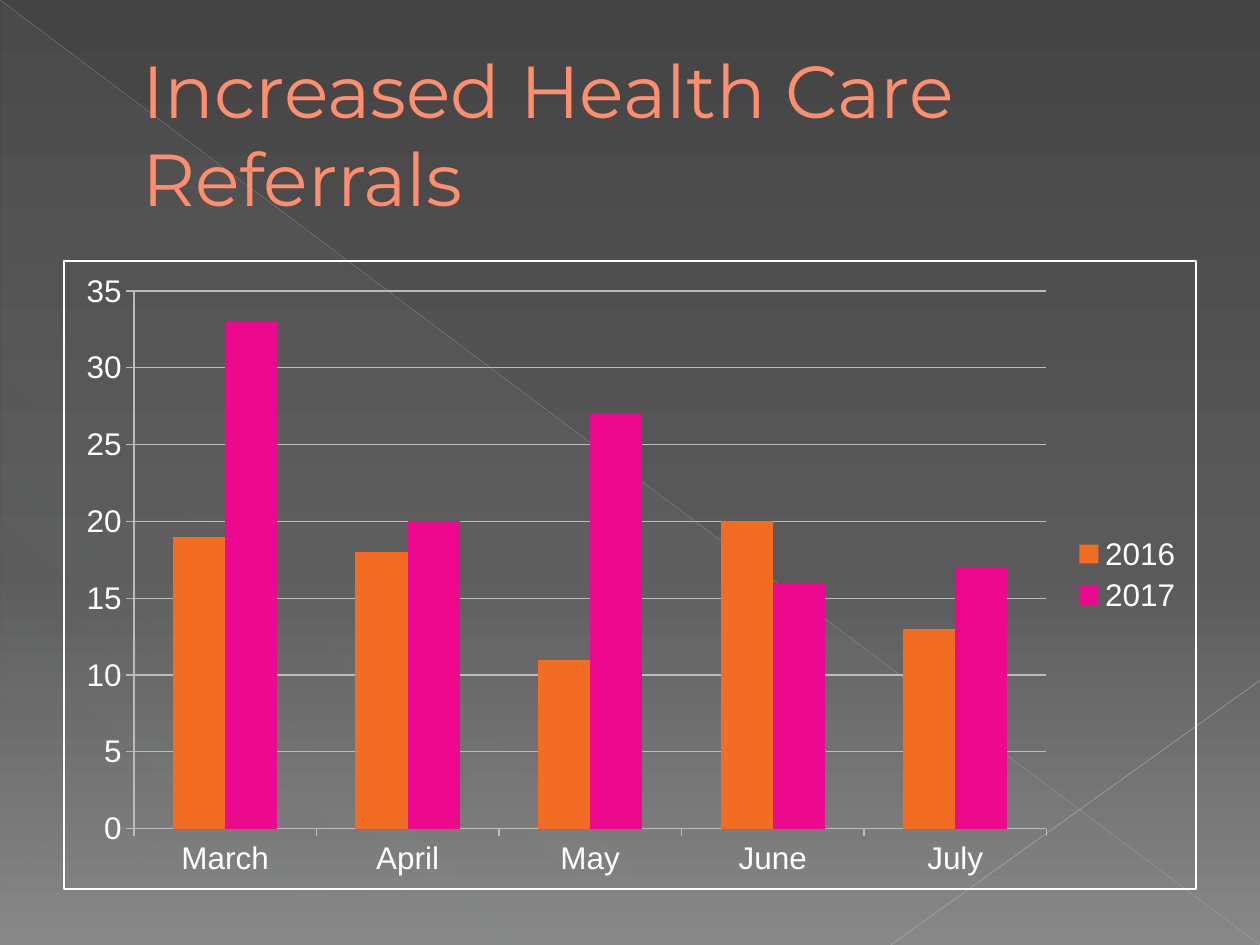
from lxml import etree
from pptx import Presentation
from pptx.chart.data import CategoryChartData
from pptx.dml.color import RGBColor
from pptx.enum.chart import XL_CHART_TYPE, XL_LEGEND_POSITION, XL_TICK_MARK
from pptx.enum.shapes import MSO_CONNECTOR, MSO_SHAPE
from pptx.enum.text import MSO_ANCHOR
from pptx.oxml.ns import qn
from pptx.util import Inches, Pt

COLUMNS = XL_CHART_TYPE.COLUMN_CLUSTERED
LEGEND_RIGHT = XL_LEGEND_POSITION.RIGHT
TICK_OUTSIDE = XL_TICK_MARK.OUTSIDE
STRAIGHT = MSO_CONNECTOR.STRAIGHT
RIGHT_TRIANGLE = MSO_SHAPE.RIGHT_TRIANGLE
MIDDLE = MSO_ANCHOR.MIDDLE

WIDTH, HEIGHT = 10, 7.5
MARGIN = 0.05
GRID_COLOR = "BABCBA"
MONTHS = ["March", "April", "May", "June", "July"]
REFERRALS = {
    "2016": ([19, 18, 11, 20, 13], "F36C24"),
    "2017": ([33, 20, 27, 16, 17], "EC098D"),
}


def color(value):
    """Turn a hex string into a colour."""
    return RGBColor.from_string(value)


def place(x, y):
    """Turn shares of the slide's size into lengths."""
    return Inches(x * WIDTH), Inches(y * HEIGHT)


def set_values(target, values):
    """Set each attribute named in a dict."""
    for name, value in values.items():
        setattr(target, name, value)


def set_alpha(color_element, percent):
    """Give a colour element an opacity in percent."""
    alpha = etree.SubElement(color_element, qn("a:alpha"))
    alpha.set("val", str(percent * 1000))


def set_gradient(fill, element, stops, angle):
    """Fill with a linear gradient of (position, colour, opacity) stops."""
    fill.solid()
    solid = element.find(".//" + qn("a:solidFill"))
    gradient = etree.Element(qn("a:gradFill"), rotWithShape="1")
    stop_list = etree.SubElement(gradient, qn("a:gsLst"))
    for position, value, opacity in stops:
        stop = etree.SubElement(stop_list, qn("a:gs"), pos=str(position * 1000))
        set_alpha(etree.SubElement(stop, qn("a:srgbClr"), val=value), opacity)
    etree.SubElement(gradient, qn("a:lin"), ang=str(angle * 60000), scaled="0")
    solid.getparent().replace(solid, gradient)


def add_triangle(slide):
    """Add the faint triangle behind the content."""
    shape = slide.shapes.add_shape(RIGHT_TRIANGLE, *place(0.001, 0.003), *place(0.998, 0.997))
    shape.shadow.inherit = False
    shape.line.fill.background()
    stops = [(0, "939598", 10), (70, "939598", 8), (100, "939598", 1)]
    set_gradient(shape.fill, shape.element, stops, 133)


def add_line(slide, start, end, value, width, opacity):
    """Add a thin translucent line without a shadow."""
    line = slide.shapes.add_connector(STRAIGHT, *place(*start), *place(*end))
    line.line.color.rgb = color(value)
    line.line.width = Pt(width)
    set_alpha(line.element.spPr.find(".//" + qn("a:srgbClr")), opacity)
    etree.SubElement(line.element.spPr, qn("a:effectLst"))


def add_title(slide, text):
    """Add the indented slide title."""
    box = slide.shapes.add_textbox(*place(MARGIN, 0.039), *place(1 - 2 * MARGIN, 0.204))
    set_values(box.text_frame, {"word_wrap": True, "vertical_anchor": MIDDLE})
    paragraph = box.text_frame.paragraphs[0]
    paragraph._p.get_or_add_pPr().set("marL", str(Inches(0.53)))
    run = paragraph.add_run()
    run.text = text
    set_values(run.font, {"name": "Montserrat", "size": Pt(42)})
    run.font.color.rgb = color("FF8E6F")


def add_border(chart, value, width):
    """Draw a border around an unfilled chart area."""
    properties = etree.Element(qn("c:spPr"))
    etree.SubElement(properties, qn("a:noFill"))
    line = etree.SubElement(properties, qn("a:ln"), w=str(Pt(width)))
    solid = etree.SubElement(line, qn("a:solidFill"))
    etree.SubElement(solid, qn("a:srgbClr"), val=value)
    chart.element.find(qn("c:chart")).addnext(properties)


def format_axes(chart):
    """Style both axes and the horizontal gridlines."""
    set_values(chart.value_axis, {"minimum_scale": 0, "maximum_scale": 35, "major_unit": 5,
                                  "has_major_gridlines": True})
    for axis in (chart.category_axis, chart.value_axis):
        axis.major_tick_mark = TICK_OUTSIDE
        axis.format.line.color.rgb = color(GRID_COLOR)
    chart.value_axis.major_gridlines.format.line.color.rgb = color(GRID_COLOR)


def add_referral_chart(slide):
    """Add the clustered columns that compare the two years."""
    data = CategoryChartData()
    data.categories = MONTHS
    for year, (values, _) in REFERRALS.items():
        data.add_series(year, values)
    frame = slide.shapes.add_chart(
        COLUMNS, *place(MARGIN, 0.275), *place(1 - 2 * MARGIN, 2 / 3), data)
    chart = frame.chart
    set_values(chart, {"has_title": False, "has_legend": True})
    set_values(chart.legend, {"position": LEGEND_RIGHT, "include_in_layout": False})
    set_values(chart.font, {"name": "Arial", "size": Pt(18)})
    chart.font.color.rgb = color("FFFFFF")
    set_values(chart.plots[0], {"gap_width": 150, "overlap": 0, "vary_by_categories": False})
    for series in chart.plots[0].series:
        series.format.fill.solid()
        series.format.fill.fore_color.rgb = color(REFERRALS[series.name][1])
    format_axes(chart)
    add_border(chart, "FFFFFF", 1)


def main():
    """Build and save the presentation."""
    presentation = Presentation()
    set_values(presentation, {"slide_width": Inches(WIDTH), "slide_height": Inches(HEIGHT)})
    slide = presentation.slides.add_slide(presentation.slide_layouts[6])
    stops = [(0, "444444", 100), (60, "5A5A5A", 100), (100, "878787", 100)]
    set_gradient(slide.background.fill, slide.element, stops, 90)
    add_triangle(slide)
    add_line(slide, (0, 0), (1, 1), "BDBDBD", 0.39, 35)
    add_line(slide, (1, 0.72), (0.707, 1), "C4C4C4", 0.47, 45)
    add_title(slide, "Increased Health Care Referrals")
    add_referral_chart(slide)
    presentation.save("out.pptx")


if __name__ == "__main__":
    main()
